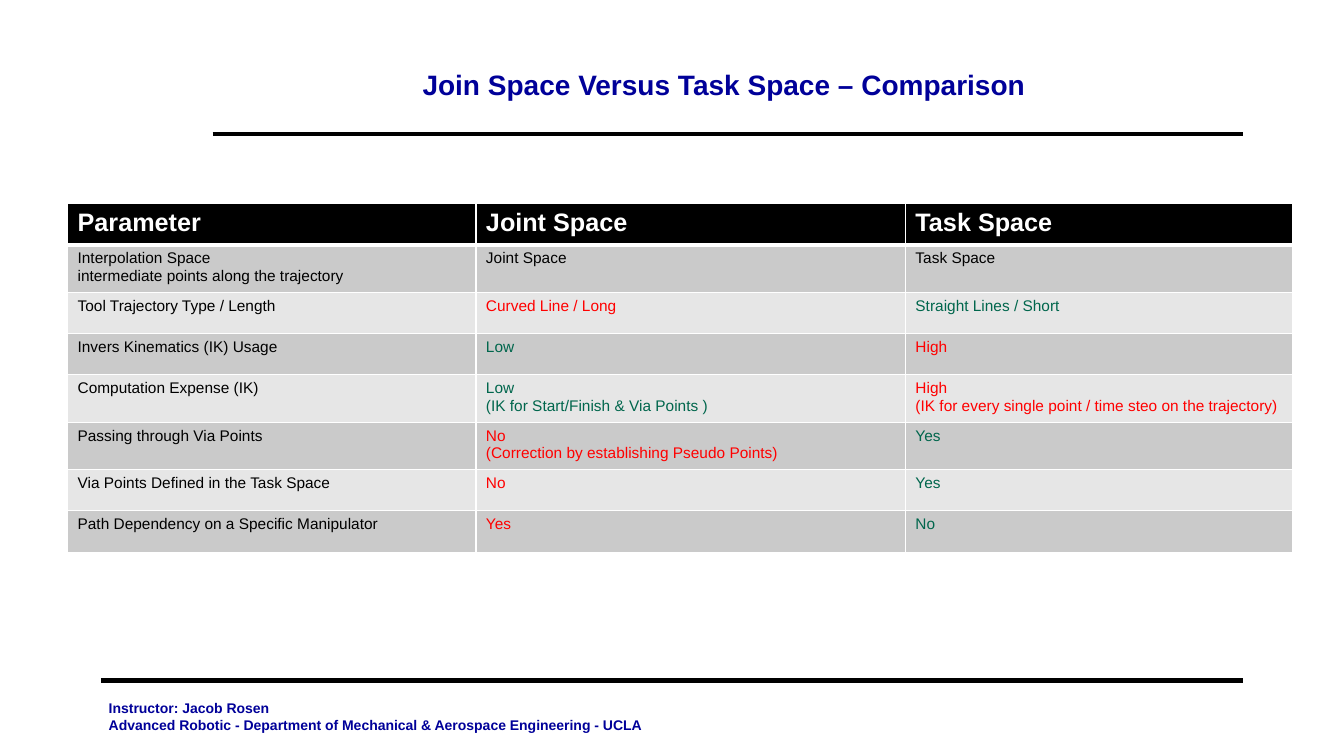
from lxml import etree
from pptx import Presentation
from pptx import util as u
from pptx.dml.color import RGBColor
from pptx.enum import shapes, text
from pptx.oxml.ns import qn

# Content
TITLE = "Join Space Versus Task Space – Comparison "
FOOTER = ["Instructor: Jacob Rosen",
          "Advanced Robotic - Department of Mechanical & Aerospace Engineering - UCLA"]
HEADER = ["Parameter", "Joint Space", "Task Space"]
# Each row: parameter, joint space, task space, and which space does better
ROWS = [
    ("Interpolation Space\nintermediate points along the trajectory",
     "Joint Space", "Task Space", None),
    ("Tool Trajectory Type / Length", "Curved Line / Long", "Straight Lines / Short", "task"),
    ("Invers Kinematics (IK) Usage", "Low", "High", "joint"),
    ("Computation Expense (IK)", "Low\n(IK for Start/Finish & Via Points )",
     "High\n(IK for every single point / time steo on the trajectory)", "joint"),
    ("Passing through Via Points", "No\n(Correction by establishing Pseudo Points)",
     "Yes", "task"),
    ("Via Points Defined in the Task Space", "No", "Yes", "task"),
    ("Path Dependency on a Specific Manipulator", "Yes", "No", "task"),
]

# Look
FONT = "Arial"
BLACK, WHITE, NAVY = "000000", "FFFFFF", "000099"
GOOD, BAD = "00664C", "FF0000"
BANDS = ["CACACA", "E6E6E6"]
VERDICTS = {None: (BLACK, BLACK, BLACK), "joint": (BLACK, GOOD, BAD),
            "task": (BLACK, BAD, GOOD)}

# Layout in inches
WIDTH, HEIGHT = 13.33, 7.5
RIGHT = WIDTH - 1
TITLE_LEFT = 2.11
TABLE_LEFT, TABLE_TOP = 0.67, 2.02
COLUMNS = [4.05, 4.26, 3.84]
ONE_LINE, TWO_LINES = 0.41, 0.47


def color(value):
    return RGBColor.from_string(value)


def write(frame, lines, size, ink, bold=False, align=None):
    frame.word_wrap = True
    frame.text = "\n".join(lines)
    for para in frame.paragraphs:
        para.alignment = align
        para.font.name, para.font.size, para.font.bold = FONT, u.Pt(size), bold
        para.font.color.rgb = color(ink)


def add_text(page, place, *style, anchor=text.MSO_ANCHOR.TOP, **options):
    box = page.shapes.add_textbox(*map(u.Inches, place))
    box.text_frame.vertical_anchor = anchor
    write(box.text_frame, *style, **options)


def add_rule(page, left, y):
    rule = page.shapes.add_connector(shapes.MSO_CONNECTOR.STRAIGHT,
                                     *map(u.Inches, (left, y, RIGHT, y)))
    rule.line.width = u.Pt(3)
    rule.line.color.rgb = color(BLACK)
    etree.SubElement(rule._element.spPr, qn("a:effectLst"))


def add_borders(cell, top, bottom):
    properties = cell._tc.get_or_add_tcPr()
    widths = {"a:lnL": 1, "a:lnR": 1, "a:lnT": top, "a:lnB": bottom}
    for tag, points in widths.items():
        edge = etree.SubElement(properties, qn(tag), w=str(u.Pt(points)))
        fill = etree.SubElement(edge, qn("a:solidFill"))
        etree.SubElement(fill, qn("a:srgbClr"), val=WHITE)


def add_comparison(page):
    heights = [ONE_LINE] + [TWO_LINES if any("\n" in entry for entry in row[:3])
                            else ONE_LINE for row in ROWS]
    place = (TABLE_LEFT, TABLE_TOP, sum(COLUMNS), sum(heights))
    table = page.shapes.add_table(len(heights), len(COLUMNS),
                                  *map(u.Inches, place)).table
    for column, width in zip(table.columns, COLUMNS):
        column.width = u.Inches(width)
    for row, height in zip(table.rows, heights):
        row.height = u.Inches(height)

    for r, entries in enumerate([HEADER] + [row[:3] for row in ROWS]):
        heading = r == 0
        inks = [WHITE] * 3 if heading else VERDICTS[ROWS[r - 1][3]]
        for c, (entry, ink) in enumerate(zip(entries, inks)):
            cell = table.cell(r, c)
            add_borders(cell, top=3 if r == 1 else 1, bottom=3 if heading else 1)
            cell.fill.solid()
            cell.fill.fore_color.rgb = color(BLACK if heading else BANDS[(r - 1) % 2])
            write(cell.text_frame, entry.split("\n"), 18 if heading else 11,
                  ink, bold=heading)


deck = Presentation()
deck.slide_width, deck.slide_height = u.Inches(WIDTH), u.Inches(HEIGHT)
page = deck.slides.add_slide(deck.slide_layouts[6])

# Rules above the footer and below the title
add_rule(page, 1, 6.75)
add_rule(page, TITLE_LEFT, 1.33)

# Title, table, footer
add_text(page, (TITLE_LEFT, 0.42, RIGHT - TITLE_LEFT, 0.83), [TITLE], 20, NAVY,
         bold=True, align=text.PP_ALIGN.CENTER, anchor=text.MSO_ANCHOR.MIDDLE)
add_comparison(page)
add_text(page, (0.98, 6.89, 7.42, 0.42), FOOTER, 10, NAVY, bold=True)

deck.save("out.pptx")
